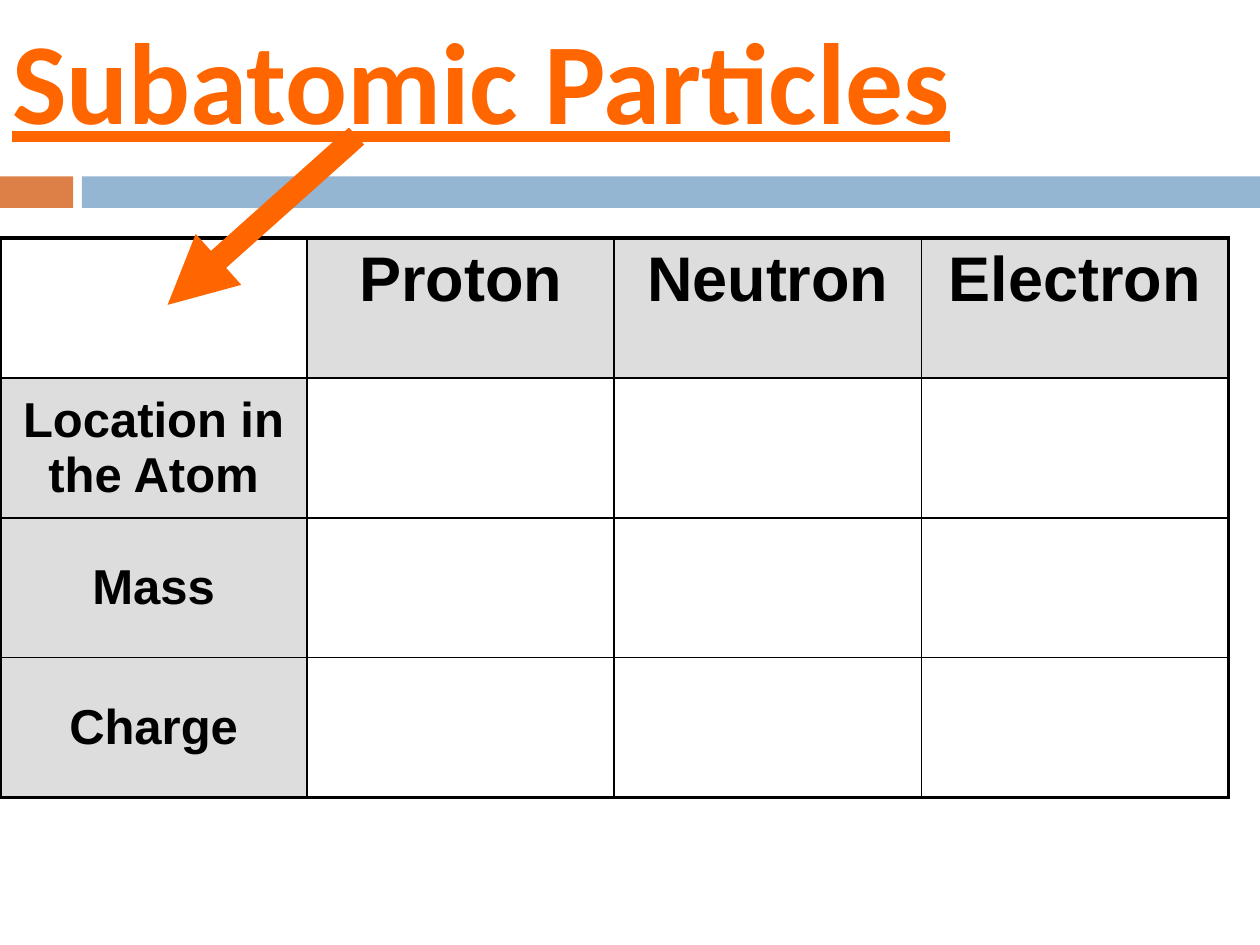
from lxml.etree import SubElement
from pptx import Presentation
from pptx.dml.color import RGBColor
from pptx.enum.shapes import MSO_CONNECTOR, MSO_SHAPE
from pptx.enum.text import MSO_ANCHOR, PP_ALIGN
from pptx.oxml.ns import qn
from pptx.util import Inches, Pt

WIDTH, HEIGHT = 10, 7.5
ORANGE, RUST, BLUE, GREY, BLACK = "FF6600", "DD8047", "94B6D2", "DDDDDD", "000000"
THIN, THICK = 1, 2.25


def color(code):
    return RGBColor.from_string(code)


def write(frame, text, size, font="Arial", ink=BLACK, underline=False,
          align=PP_ALIGN.LEFT, space_before=None):
    """Put one bold line of text in a frame; space_before is a percentage."""
    paragraph = frame.paragraphs[0]
    paragraph.alignment = align
    if space_before:
        spacing = SubElement(paragraph._p.get_or_add_pPr(), qn("a:spcBef"))
        SubElement(spacing, qn("a:spcPct"), val=str(space_before * 1000))
    run = paragraph.add_run()
    run.text = text
    run.font.name, run.font.size = font, Pt(size)
    run.font.bold, run.font.underline = True, underline
    run.font.color.rgb = color(ink)


def draw_border(cell, side, width):
    line = SubElement(cell._tc.get_or_add_tcPr(), qn(f"a:ln{side}"), w=str(Pt(width)))
    fill = SubElement(line, qn("a:solidFill"))
    SubElement(fill, qn("a:srgbClr"), val=BLACK)


class SlideBuilder:
    """Holds the slide and its style; lengths are shares of the slide's size."""

    def __init__(self, slide):
        self.shapes = slide.shapes

    def place(self, x, y, *size):
        shares = (x, y) + size
        return [Inches(share * (HEIGHT if i % 2 else WIDTH))
                for i, share in enumerate(shares)]

    def bar(self, box, fill):
        bar = self.shapes.add_shape(MSO_SHAPE.RECTANGLE, *self.place(*box))
        bar.shadow.inherit = False
        bar.fill.solid()
        bar.fill.fore_color.rgb = color(fill)
        bar.line.fill.background()

    def title(self, box, text):
        frame = self.shapes.add_textbox(*self.place(*box)).text_frame
        frame.word_wrap = True
        frame.vertical_anchor = MSO_ANCHOR.MIDDLE
        write(frame, text, 66, font="Calibri", ink=ORANGE, underline=True)

    def table(self, box, column_heads, row_heads):
        rows, columns = len(row_heads) + 1, len(column_heads) + 1
        table = self.shapes.add_table(rows, columns, *self.place(*box)).table
        table.first_row = table.horz_banding = False
        for r in range(rows):
            for c in range(columns):
                cell = table.cell(r, c)
                # The outer frame is thicker than the inner grid
                outer = {"L": c == 0, "R": c == columns - 1,
                         "T": r == 0, "B": r == rows - 1}
                for side, on_edge in outer.items():
                    draw_border(cell, side, THICK if on_edge else THIN)
                # Only the heads are shaded and hold text
                if (r == 0) == (c == 0):
                    cell.fill.background()
                    continue
                cell.fill.solid()
                cell.fill.fore_color.rgb = color(GREY)
                if c == 0:
                    cell.vertical_anchor = MSO_ANCHOR.MIDDLE
                text, size = (column_heads[c - 1], 36) if r == 0 else (row_heads[r - 1], 28)
                write(cell.text_frame, text, size, align=PP_ALIGN.CENTER, space_before=20)

    def arrow(self, start, end, ink, width):
        arrow = self.shapes.add_connector(
            MSO_CONNECTOR.STRAIGHT, *self.place(*start), *self.place(*end))
        arrow.line.color.rgb = color(ink)
        arrow.line.width = Pt(width)
        SubElement(arrow.line._get_or_add_ln(), qn("a:tailEnd"), type="triangle")
        SubElement(arrow._element.spPr, qn("a:effectLst"))


def main():
    deck = Presentation()
    deck.slide_width, deck.slide_height = Inches(WIDTH), Inches(HEIGHT)
    builder = SlideBuilder(deck.slides.add_slide(deck.slide_layouts[6]))

    # Two-colour band under the title
    band_top, band_height, gap_end = 1.4 / HEIGHT, 0.25 / HEIGHT, 0.065
    builder.bar((0, band_top, 0.058, band_height), RUST)
    builder.bar((gap_end, band_top, 1 - gap_end, band_height), BLUE)

    builder.title((0, 0, 1, 1.25 / HEIGHT), "Subatomic Particles")

    # Particle comparison, left open to be filled in
    builder.table((0, 1.89 / HEIGHT, 0.975, 4.44 / HEIGHT),
                  ["Proton", "Neutron", "Electron"],
                  ["Location in the Atom", "Mass", "Charge"])

    # Pointer from the title to the table's corner
    builder.arrow((0.283, 1.08 / HEIGHT), (0.133, 2.42 / HEIGHT), ORANGE, 13)

    deck.save("out.pptx")


if __name__ == "__main__":
    main()
